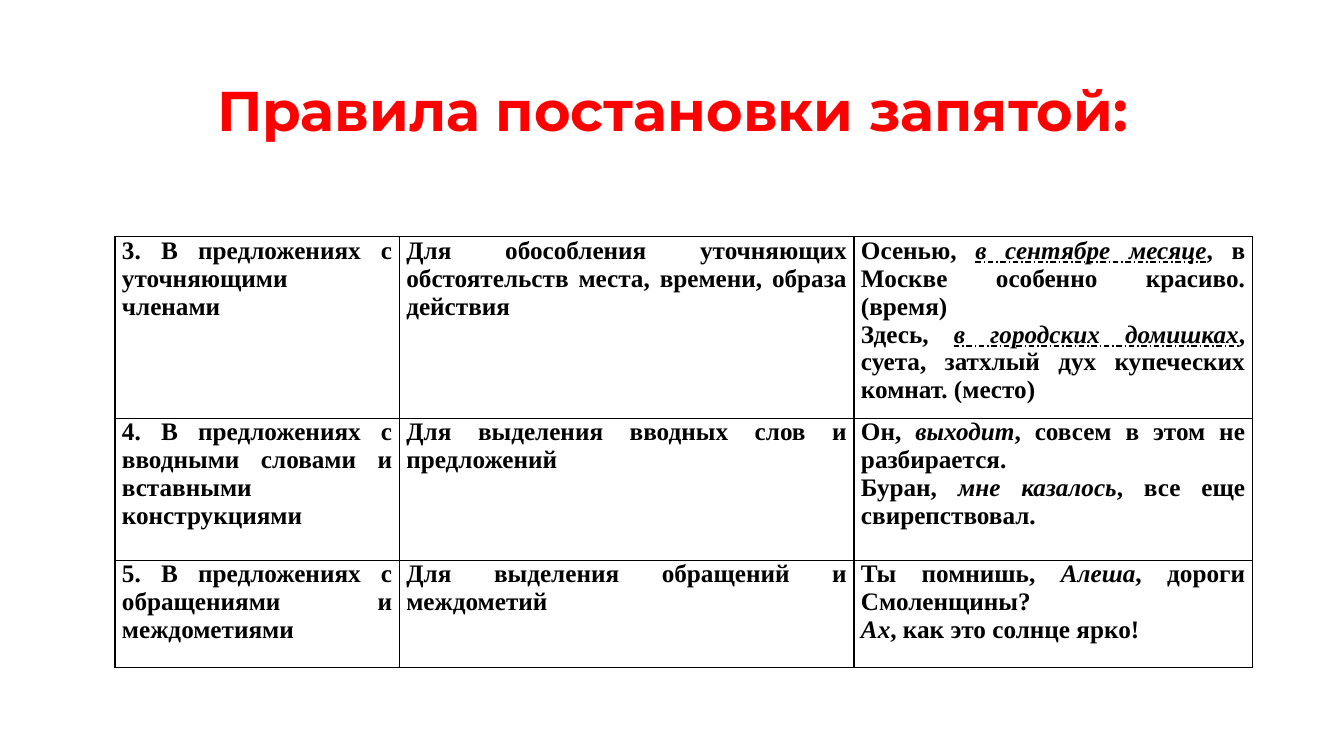
from typing import NamedTuple

from lxml.etree import SubElement
from pptx import Presentation
from pptx.dml.color import RGBColor
from pptx.enum.text import MSO_ANCHOR, MSO_UNDERLINE, PP_ALIGN
from pptx.oxml.ns import qn
from pptx.util import Emu, Inches, Pt

COLORS = {"title": "FF0000", "text": "000000", "border": "000000"}
TITLE_FONT, TABLE_FONT = "Montserrat", "Times New Roman"
SLIDE_WIDTH, SLIDE_HEIGHT = Inches(13.33), Inches(7.5)

# Shares of the slide's width and height, in percent
TITLE_AREA = (6.9, 5.33, 86.27, 19.33)
TABLE_LEFT, TABLE_TOP = 8.55, 31.33
COLUMN_SHARES = (21.16, 33.83, 29.63)
ROW_SHARES = (23.6, 18.8, 14.13)


class Span(NamedTuple):
    text: str
    italic: bool = False
    underlined: bool = False


class Rule(NamedTuple):
    sentence_type: str
    purpose: str
    examples: list[list[Span]]


RULES = [
    Rule(
        "3. В предложениях с уточняющими членами",
        "Для обособления уточняющих обстоятельств места, времени, образа действия",
        [
            [Span("Осенью, "), Span("в сентябре месяце", True, True),
             Span(", в Москве особенно красиво. (время)")],
            [Span("Здесь, "), Span("в городских домишках", True, True),
             Span(", суета, затхлый дух купеческих комнат. (место)")],
        ],
    ),
    Rule(
        "4. В предложениях с вводными словами и вставными конструкциями",
        "Для выделения вводных слов и предложений",
        [
            [Span("Он, "), Span("выходит", True), Span(", совсем в этом не разбирается.")],
            [Span("Буран, "), Span("мне казалось", True), Span(", все еще свирепствовал.")],
        ],
    ),
    Rule(
        "5. В предложениях с обращениями и междометиями",
        "Для выделения обращений и междометий",
        [
            [Span("Ты помнишь, "), Span("Алеша", True), Span(", дороги Смоленщины?")],
            [Span("Ах", True), Span(", как это солнце ярко!")],
        ],
    ),
]


def across(share: float) -> Emu:
    return Emu(round(SLIDE_WIDTH * share / 100))


def down(share: float) -> Emu:
    return Emu(round(SLIDE_HEIGHT * share / 100))


def style_font(font, name: str, size: float, color: str) -> None:
    font.name, font.size, font.bold = name, Pt(size), True
    font.color.rgb = RGBColor.from_string(COLORS[color])


def add_title(page, text: str) -> None:
    left, top, width, height = TITLE_AREA
    box = page.shapes.add_textbox(across(left), down(top), across(width), down(height))
    frame = box.text_frame
    frame.text = text
    frame.word_wrap = True
    frame.vertical_anchor = MSO_ANCHOR.MIDDLE
    para = frame.paragraphs[0]
    para.alignment = PP_ALIGN.CENTER
    para.line_spacing = 0.9
    style_font(para.runs[0].font, TITLE_FONT, 40, "title")


def add_borders(cell) -> None:
    properties = cell._tc.get_or_add_tcPr()
    for position, side in enumerate(("lnL", "lnR", "lnT", "lnB")):
        line = SubElement(properties, qn(f"a:{side}"), w=str(Pt(1)))
        fill = SubElement(line, qn("a:solidFill"))
        SubElement(fill, qn("a:srgbClr"), val=COLORS["border"])
        properties.insert(position, line)  # borders precede the cell fill


def fill_cell(cell, paragraphs: list[list[Span]]) -> None:
    cell.fill.background()
    cell.margin_left = cell.margin_right = Inches(0.07)
    cell.margin_top = cell.margin_bottom = 0
    add_borders(cell)
    frame = cell.text_frame
    for index, spans in enumerate(paragraphs):
        para = frame.add_paragraph() if index else frame.paragraphs[0]
        para.alignment = PP_ALIGN.JUSTIFY
        for span in spans:
            run = para.add_run()
            run.text = span.text
            style_font(run.font, TABLE_FONT, 18, "text")
            run.font.italic = span.italic
            if span.underlined:
                run.font.underline = MSO_UNDERLINE.DOT_DASH_LINE


def add_rules_table(page, rules: list[Rule]) -> None:
    table = page.shapes.add_table(
        len(rules), len(COLUMN_SHARES), across(TABLE_LEFT), down(TABLE_TOP),
        across(sum(COLUMN_SHARES)), down(sum(ROW_SHARES)),
    ).table
    table.first_row = table.horz_banding = False
    for column, share in zip(table.columns, COLUMN_SHARES):
        column.width = across(share)
    for row, share, rule in zip(table.rows, ROW_SHARES, rules):
        row.height = down(share)
        contents = ([[Span(rule.sentence_type)]], [[Span(rule.purpose)]], rule.examples)
        for cell, paragraphs in zip(row.cells, contents):
            fill_cell(cell, paragraphs)


def main() -> None:
    deck = Presentation()
    deck.slide_width, deck.slide_height = SLIDE_WIDTH, SLIDE_HEIGHT
    page = deck.slides.add_slide(deck.slide_layouts[6])
    add_title(page, "Правила постановки запятой:")
    add_rules_table(page, RULES)
    deck.save("out.pptx")


if __name__ == "__main__":
    main()
